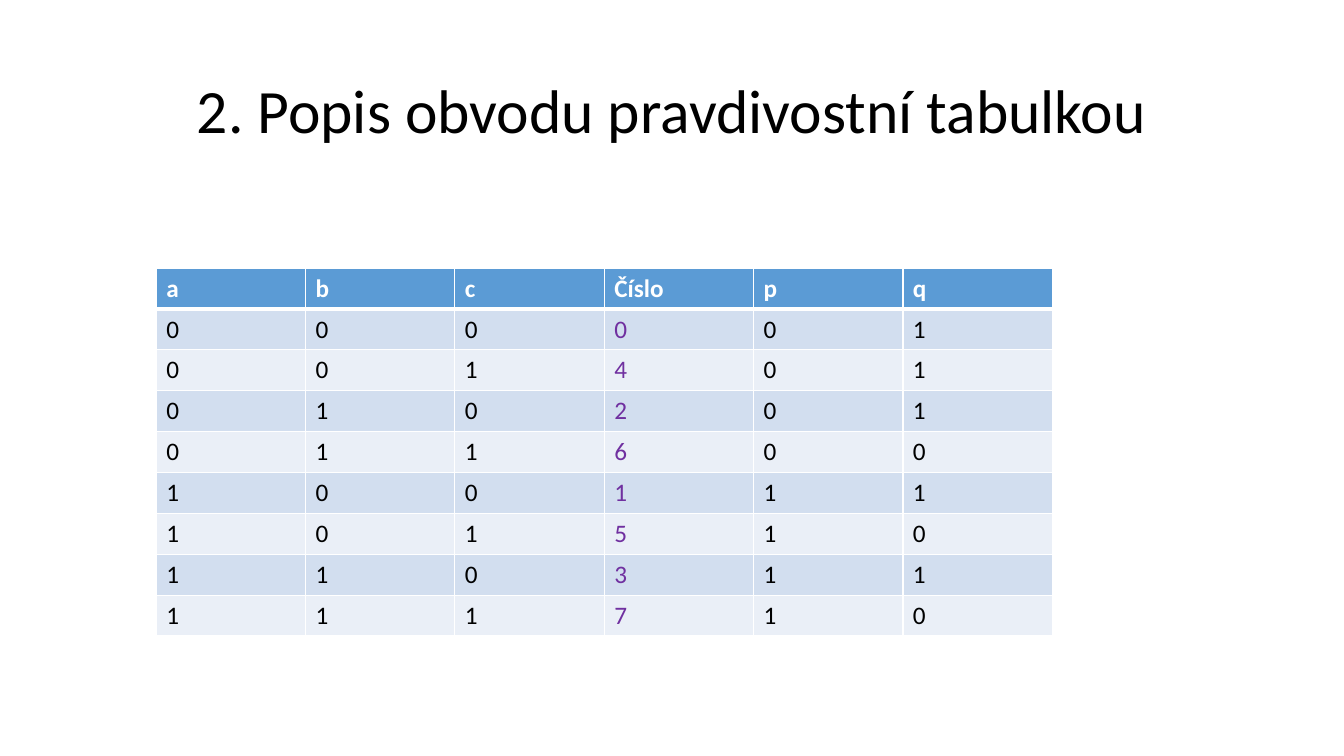
"""Build a slide with the truth table of a logic circuit."""
from lxml import etree
from pptx import Presentation
from pptx.dml.color import RGBColor
from pptx.enum.text import MSO_ANCHOR, PP_ALIGN
from pptx.oxml.ns import qn
from pptx.util import Pt

MIDDLE = MSO_ANCHOR.MIDDLE
CENTER = PP_ALIGN.CENTER
BLACK = RGBColor(0x00, 0x00, 0x00)
WHITE = RGBColor(0xFF, 0xFF, 0xFF)
PURPLE = RGBColor(0x70, 0x30, 0xA0)
HEADER_BLUE = RGBColor(0x5B, 0x9B, 0xD5)
BANDS = [RGBColor(0xEA, 0xEF, 0xF7), RGBColor(0xD2, 0xDE, 0xEF)]

HEADER = ["a", "b", "c", "Číslo", "p", "q"]
ROWS = ["000001", "001401", "010201", "011600", "100111", "101510", "110311", "111710"]
NUMBER_COL = HEADER.index("Číslo")


def add_run(p, text, size, color, bold=False):
    r = p.add_run()
    r.text = text
    for name, value in {"name": "Calibri", "size": Pt(size), "bold": bold}.items():
        setattr(r.font, name, value)
    r.font.color.rgb = color


def set_borders(cell, widths):
    tc_pr = cell._tc.get_or_add_tcPr()
    for side, width in widths.items():
        ln = etree.SubElement(tc_pr, qn(f"a:ln{side}"), w=str(Pt(width)))
        fill = etree.SubElement(ln, qn("a:solidFill"))
        etree.SubElement(fill, qn("a:srgbClr"), val=str(WHITE))


prs = Presentation()
prs.slide_width, prs.slide_height = Pt(960), Pt(540)
s = prs.slides.add_slide(prs.slide_layouts[6])

tf = s.shapes.add_textbox(Pt(66), Pt(28.75), Pt(828), Pt(104.4)).text_frame
tf.word_wrap = True
tf.vertical_anchor = MIDDLE
p = tf.paragraphs[0]
p.alignment = CENTER
p.line_spacing = 0.9
add_run(p, "2. Popis obvodu pravdivostní tabulkou", 44, BLACK)

data = [HEADER, *ROWS]
table = s.shapes.add_table(
    len(data), len(HEADER), Pt(111.6), Pt(191.5), Pt(640), Pt(262.8)
).table
for col in table.columns:
    col.width = Pt(106.67)
for row in table.rows:
    row.height = Pt(29.2)

for i, values in enumerate(data):
    is_header = i == 0
    for j, text in enumerate(values):
        cell = table.cell(i, j)
        set_borders(cell, {"L": 1, "R": 1, "T": 3 if i == 1 else 1, "B": 3 if is_header else 1})
        cell.fill.solid()
        cell.fill.fore_color.rgb = HEADER_BLUE if is_header else BANDS[i % 2]
        color = WHITE if is_header else PURPLE if j == NUMBER_COL else BLACK
        add_run(cell.text_frame.paragraphs[0], text, 18, color, is_header)

prs.save("out.pptx")
